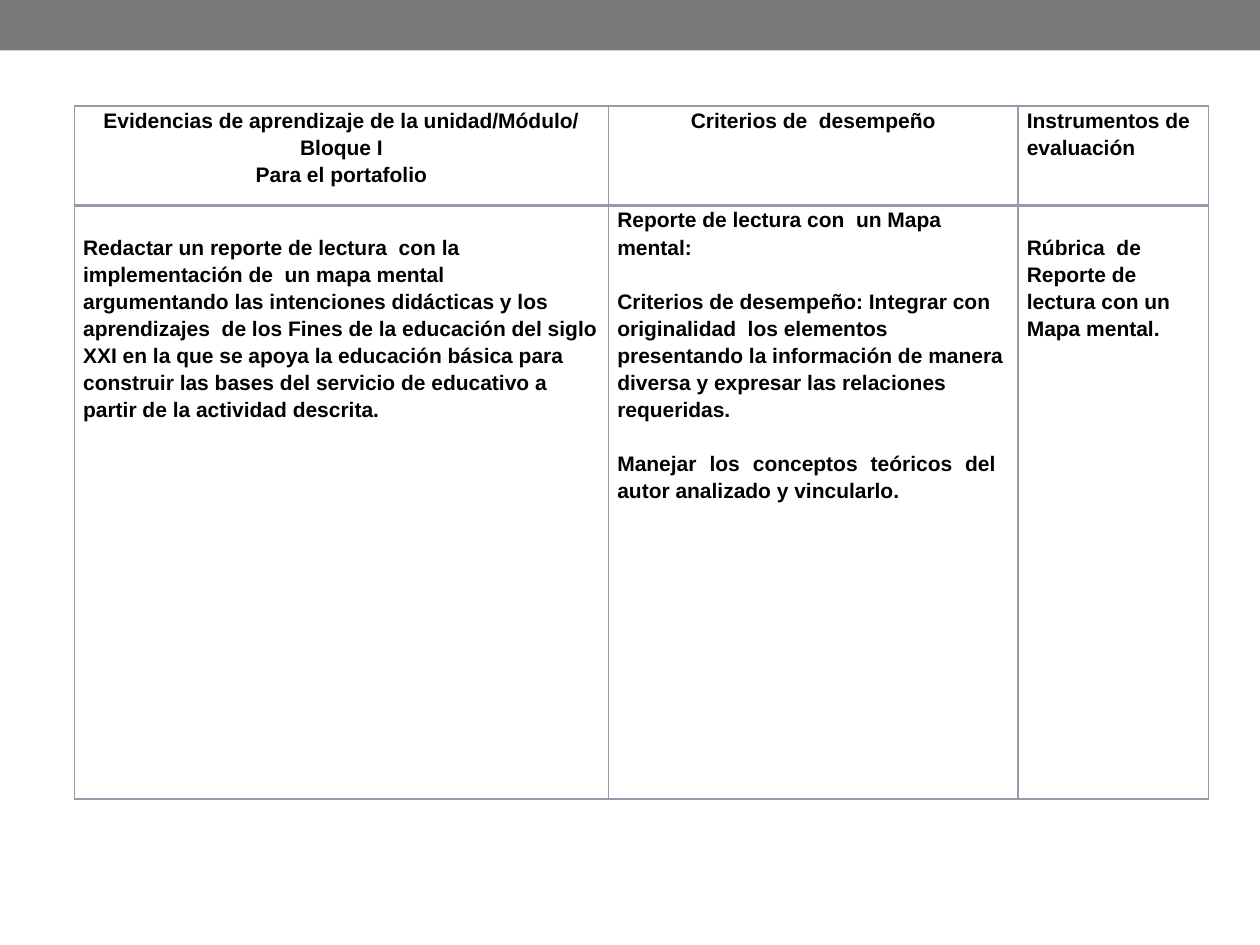
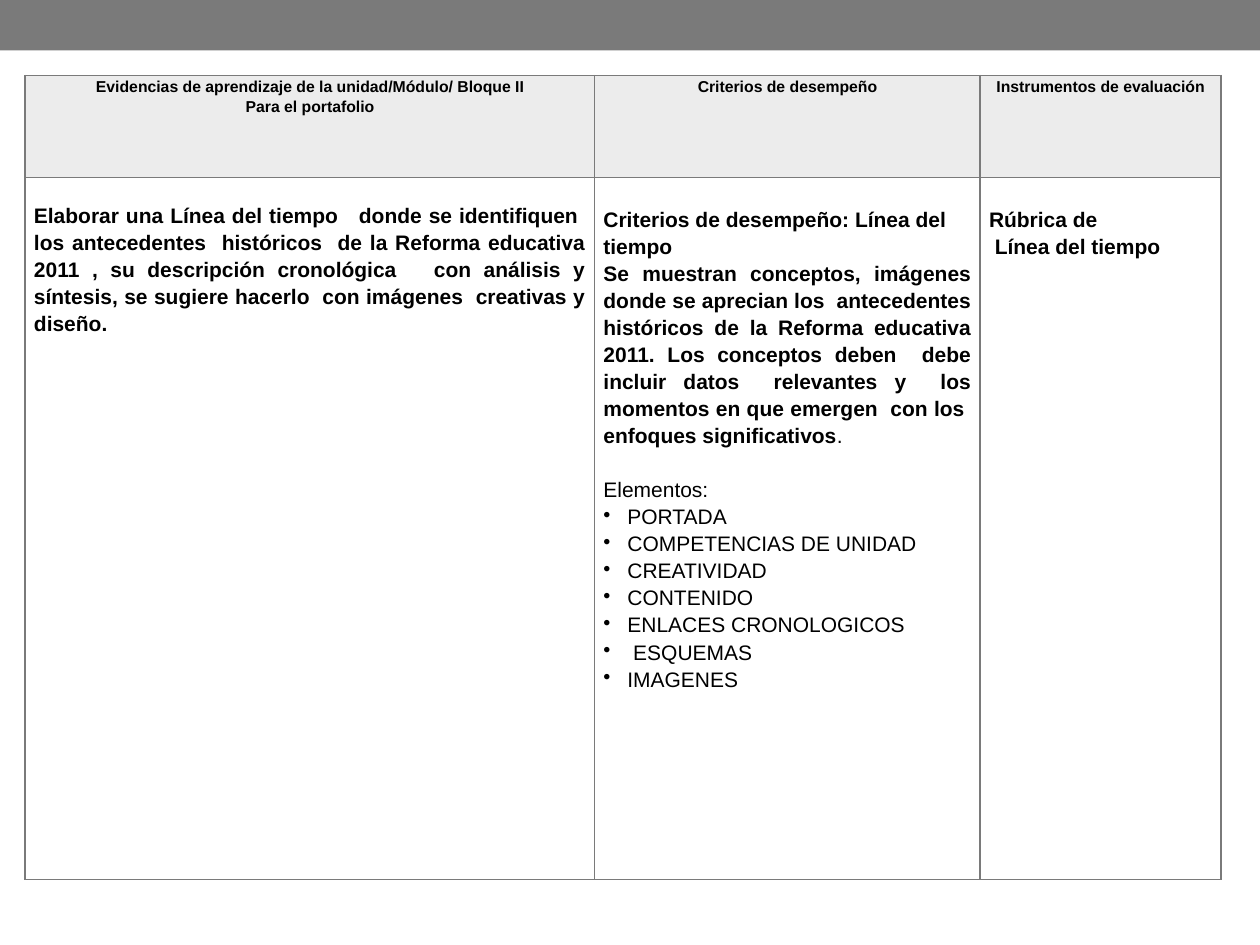
from dataclasses import dataclass

from lxml.etree import SubElement
from pptx import Presentation
from pptx.dml.color import RGBColor
from pptx.enum.shapes import MSO_SHAPE as Shape
from pptx.enum.text import PP_ALIGN as Align
from pptx.oxml import parse_xml
from pptx.oxml.ns import nsdecls, qn
from pptx.util import Inches, Pt

GRAY = RGBColor(0x7A, 0x7A, 0x7A)
SLATE = RGBColor(0x98, 0x9A, 0xAC)
PALE = RGBColor(0xEC, 0xEC, 0xEC)
WHITE = RGBColor(0xFF, 0xFF, 0xFF)
BLACK = RGBColor(0, 0, 0)
FONT = "Arial"
COLS, ROWS = 100, 75  # grid of the slide, one cell is a tenth of an inch
LEFT, MID, JUST = Align.LEFT, Align.CENTER, Align.JUSTIFY
LINE = 15.5  # height of one body line in points


@dataclass
class Para:
    text: str
    align: Align = LEFT
    size: float = 12
    bold: bool = True
    gap: float = 0  # space before, in points
    dot: bool = False
    tail: str = ""  # closing words in regular weight


@dataclass
class Cell:
    paras: list
    top: float = 0  # upper margin, in grid rows


class Deck:
    def __init__(self):
        self.prs = Presentation()
        self.prs.slide_width = self.unit(COLS)
        self.prs.slide_height = self.unit(ROWS)
        self.slide = None

    def unit(self, count):
        return Inches(count / 10)

    def start(self):
        """Open a slide with the band on top."""
        self.slide = self.prs.slides.add_slide(self.prs.slide_layouts[6])
        band = self.slide.shapes.add_shape(Shape.RECTANGLE, 0, 0, self.unit(COLS), self.unit(4))
        band.shadow.inherit = False
        band.fill.solid()
        band.fill.fore_color.rgb = GRAY
        band.line.fill.background()

    def table(self, left, top, widths, heights, cells, head, edge, rule=1):
        """Draw a table; rule is the width of the line below its head."""
        frame = self.slide.shapes.add_table(
            len(heights), len(widths), self.unit(left), self.unit(top),
            self.unit(sum(widths)), self.unit(sum(heights)))
        grid = frame.table
        grid.horz_banding = False
        for col, width in zip(grid.columns, widths):
            col.width = self.unit(width)
        for r, height in enumerate(heights):
            grid.rows[r].height = self.unit(height)
            for c, data in enumerate(cells[r]):
                cell = grid.cell(r, c)
                cell.fill.solid()
                cell.fill.fore_color.rgb = WHITE if r else head
                self.edges(cell, edge, {"T" if r else "B": rule})
                self.fill(cell, data)

    def edges(self, cell, color, wide):
        props = cell._tc.get_or_add_tcPr()
        for n, side in enumerate("LRTB"):
            props.insert(n, parse_xml(
                f'<a:ln{side} {nsdecls("a")} w="{Pt(wide.get(side, 1))}">'
                f'<a:solidFill><a:srgbClr val="{color}"/></a:solidFill></a:ln{side}>'))

    def fill(self, cell, data):
        cell.margin_left = cell.margin_right = self.unit(0.7)
        cell.margin_top, cell.margin_bottom = self.unit(data.top), 0
        frame = cell.text_frame
        for n, item in enumerate(data.paras):
            para = frame.add_paragraph() if n else frame.paragraphs[0]
            self.words(para, item)

    def words(self, para, item):
        para.text = item.text
        if item.dot:
            props = para._p.get_or_add_pPr()
            props.set("marL", str(Inches(0.19)))
            props.set("indent", str(-Inches(0.19)))
            SubElement(props, qn("a:buChar"), char="•")
        if item.tail:
            para.add_run().text = item.tail
        para.alignment = item.align
        para.line_spacing = 1.15
        if item.gap:
            para.space_before = Pt(item.gap)
        for n, run in enumerate(para.runs):
            font = run.font
            font.name, font.size = FONT, Pt(item.size)
            font.bold = item.bold and n == 0
            font.color.rgb = BLACK


def heads(size, *texts):
    """Make one centred head cell from each list of lines."""
    return [Cell([Para(line, MID, size) for line in lines]) for lines in texts]


def block_one(deck):
    deck.start()
    head = heads(
        12,
        ["Evidencias de aprendizaje de la unidad/Módulo/ Bloque I", "Para el portafolio"],
        ["Criterios de  desempeño"])
    head.append(Cell([Para("Instrumentos de"), Para("evaluación")]))
    task = Para(
        "Redactar un reporte de lectura  con la implementación de  un mapa mental  "
        "argumentando las intenciones didácticas y los aprendizajes  de los Fines de la "
        "educación del siglo XXI en la que se apoya la educación básica para construir las "
        "bases del servicio de educativo a partir de la actividad descrita.")
    goals = [
        Para("Reporte de lectura con  un Mapa mental:"),
        Para("Criterios de desempeño: Integrar con originalidad  los elementos presentando la "
             "información de manera diversa y expresar las relaciones requeridas.", gap=LINE),
        Para("Manejar los conceptos teóricos del  autor analizado y vincularlo.", JUST, gap=LINE),
    ]
    tools = [Para("Rúbrica  de Reporte de lectura con un"), Para("Mapa mental.")]
    body = [Cell([task], 2.15), Cell(goals), Cell(tools, 2.15)]
    deck.table(5.9, 8.4, [42.4, 32.5, 15.1], [7.9, 47.1], [head, body], WHITE, SLATE, rule=2)


def block_two(deck):
    deck.start()
    head = heads(
        9,
        ["Evidencias de aprendizaje de la unidad/Módulo/ Bloque II", "Para el portafolio"],
        ["Criterios de desempeño"],
        ["Instrumentos de evaluación"])
    task = Para(
        "Elaborar una Línea del tiempo   donde se identifiquen  los antecedentes  históricos  "
        "de la Reforma educativa 2011 , su descripción cronológica   con análisis y síntesis, "
        "se sugiere hacerlo  con imágenes  creativas y diseño.", JUST)
    goals = [
        Para("Criterios de desempeño: Línea del tiempo"),
        Para("Se muestran conceptos, imágenes donde se aprecian los  antecedentes históricos de "
             "la Reforma educativa 2011. Los conceptos deben  debe incluir datos  relevantes y  "
             "los momentos en que emergen  con los  enfoques significativos", JUST, tail="."),
        Para("Elementos:", JUST, bold=False, gap=LINE),
    ]
    parts = ["PORTADA", "COMPETENCIAS DE UNIDAD", "CREATIVIDAD", "CONTENIDO",
             "ENLACES CRONOLOGICOS", " ESQUEMAS", "IMAGENES"]
    goals += [Para(part, JUST, bold=False, dot=True) for part in parts]
    tools = [Para("Rúbrica de", JUST), Para(" Línea del tiempo", JUST)]
    body = [Cell([task], 1.85), Cell(goals, 2.15), Cell(tools, 2.15)]
    deck.table(2, 6, [45.2, 30.6, 19.1], [8.1, 55.7], [head, body], PALE, GRAY)


def main():
    deck = Deck()
    block_one(deck)
    block_two(deck)
    deck.prs.save("out.pptx")


if __name__ == "__main__":
    main()
